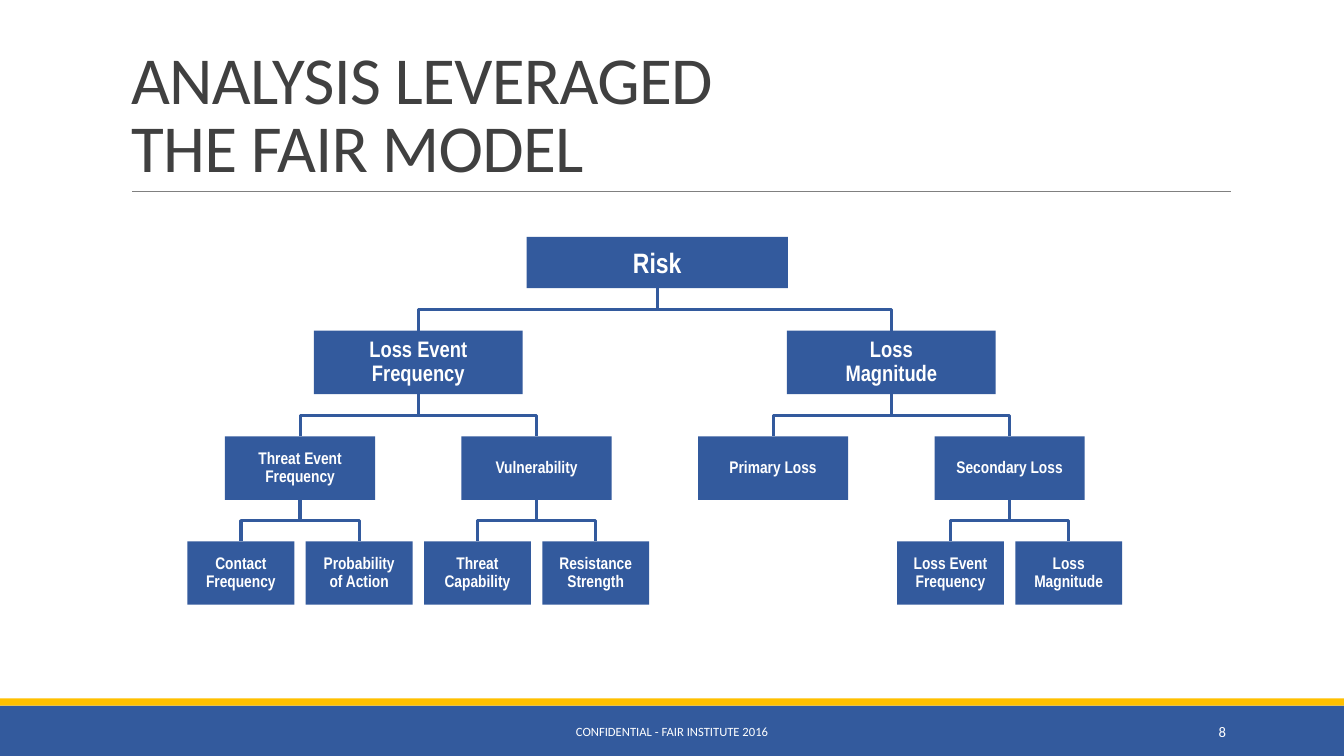
import dataclasses

import pptx
import pptx.dml.color
import pptx.enum.shapes
import pptx.enum.text
import pptx.oxml.ns
import pptx.util
import lxml.etree

PX = 9144  # EMU in one px, 100 px to the inch
ALIGN = pptx.enum.text.PP_ALIGN
ANCHOR = pptx.enum.text.MSO_ANCHOR


@dataclasses.dataclass(frozen=True)
class Theme:
    blue: str = "335A9D"
    gold: str = "FFC000"
    ink: str = "404040"
    rule: str = "808080"
    white: str = "FFFFFF"
    body_font: str = "Calibri"
    box_font: str = "Arial Narrow"
    title_size: float = 48
    footer_size: float = 9
    number_size: float = 10.5
    rule_width: float = 0.5
    branch_width: float = 2.25


THEME = Theme()


@dataclasses.dataclass(frozen=True)
class Level:
    top: int
    width: int
    height: int
    size: int
    spacing: float = 0.9


LEVELS = [
    Level(235, 259, 51, 20, 1.0),
    Level(328, 207, 63, 16),
    Level(433, 149, 63, 12),
    Level(537, 106, 63, 12),
]

# Each node: text, centre in leaf slots, children
RISK_TREE = ("Risk", 3.52, [
    ("Loss Event Frequency", 1.5, [
        ("Threat Event Frequency", 0.5, [
            ("Contact Frequency", 0, []),
            ("Probability of Action", 1, []),
        ]),
        ("Vulnerability", 2.5, [
            ("Threat Capability", 2, []),
            ("Resistance Strength", 3, []),
        ]),
    ]),
    ("Loss\nMagnitude", 5.5, [
        ("Primary Loss", 4.5, []),
        ("Secondary Loss", 6.5, [
            ("Loss Event Frequency", 6, []),
            ("Loss Magnitude", 7, []),
        ]),
    ]),
])
FIRST_SLOT, LAST_SLOT, LAST_INDEX = 239, 1060, 7


def px(n):
    return pptx.util.Emu(round(n * PX))


def rgb(value):
    return pptx.dml.color.RGBColor.from_string(value)


def write(sp, text, size, font, color, align, anchor=ANCHOR.MIDDLE,
          spacing=1.0, bold=False, tracking=None):
    """Fill a shape with one paragraph; a newline becomes a line break."""
    tf = sp.text_frame
    tf.word_wrap = True
    tf.auto_size = pptx.enum.text.MSO_AUTO_SIZE.NONE
    tf.vertical_anchor = anchor
    p = tf.paragraphs[0]
    p.alignment = align
    p.line_spacing = spacing
    for i, line in enumerate(text.split("\n")):
        if i:
            p.add_line_break()
        r = p.add_run()
        r.text = line
        r.font.size = pptx.util.Pt(size)
        r.font.name = font
        r.font.bold = bold
        r.font.color.rgb = rgb(color)
        if tracking is not None:
            r.font._element.set("spc", str(round(tracking * 100)))


def add_rect(s, left, top, width, height, color):
    sp = s.shapes.add_shape(pptx.enum.shapes.MSO_SHAPE.RECTANGLE,
                            px(left), px(top), px(width), px(height))
    sp.shadow.inherit = False
    sp.fill.solid()
    sp.fill.fore_color.rgb = rgb(color)
    sp.line.fill.background()
    return sp


def style_line(line, color, width):
    line.line.color.rgb = rgb(color)
    line.line.width = pptx.util.Pt(width)
    lxml.etree.SubElement(line._element.spPr, pptx.oxml.ns.qn("a:effectLst"))


def add_rule(s, x1, x2, y):
    line = s.shapes.add_connector(pptx.enum.shapes.MSO_CONNECTOR.STRAIGHT,
                                  px(x1), px(y), px(x2), px(y))
    style_line(line, THEME.rule, THEME.rule_width)


def add_label(s, left, width, text, size, align):
    sp = s.shapes.add_textbox(px(left), px(706), px(width), px(40))
    write(sp, text, size, THEME.body_font, THEME.white, align)


def add_title(s, text):
    sp = s.shapes.title
    sp.left, sp.top, sp.width, sp.height = px(120), px(31), px(1100), px(159)
    write(sp, text, THEME.title_size, THEME.body_font, THEME.ink, ALIGN.LEFT,
          ANCHOR.BOTTOM, spacing=0.85, tracking=-0.5)


def add_branch(s, parent, child):
    """Elbow from the parent's bottom to the child's top, turned to run downwards."""
    line = s.shapes.add_connector(pptx.enum.shapes.MSO_CONNECTOR.ELBOW, 0, 0, 0, 0)
    line.begin_connect(parent, 2)
    line.end_connect(child, 0)
    x1, y1 = parent.left + parent.width // 2, parent.top + parent.height
    x2, y2 = child.left + child.width // 2, child.top
    drop, spread = y2 - y1, abs(x2 - x1)
    line.left = pptx.util.Emu((x1 + x2 - drop) // 2)
    line.top = pptx.util.Emu((y1 + y2 - spread) // 2)
    line.width, line.height = pptx.util.Emu(drop), pptx.util.Emu(spread)
    xfrm = line._element.spPr.xfrm
    goes_right = x2 > x1
    xfrm.set("rot", str((270 if goes_right else 90) * 60000))
    xfrm.set("flipH", "1" if goes_right else "0")
    xfrm.set("flipV", "0")
    style_line(line, THEME.blue, THEME.branch_width)


def add_tree(s, node, depth=0):
    """Draw a node and everything below it; return the node's box."""
    text, slot, children = node
    level = LEVELS[depth]
    centre = FIRST_SLOT + (LAST_SLOT - FIRST_SLOT) * slot / LAST_INDEX
    box = add_rect(s, centre - level.width / 2, level.top,
                   level.width, level.height, THEME.blue)
    write(box, text, level.size, THEME.box_font, THEME.white, ALIGN.CENTER,
          spacing=level.spacing, bold=True)
    for child in children:
        add_branch(s, box, add_tree(s, child, depth + 1))
    return box


def main():
    prs = pptx.Presentation()
    prs.slide_width, prs.slide_height = px(1333), px(750)
    s = prs.slides.add_slide(prs.slide_layouts[5])
    add_rect(s, 0, 700, 1333, 50, THEME.blue)
    add_rect(s, 0, 693, 1333, 7, THEME.gold)
    add_rule(s, 131, 1221, 190)
    add_title(s, "ANALYSIS LEVERAGED\nTHE FAIR MODEL")
    add_label(s, 403, 527, "CONFIDENTIAL - FAIR INSTITUTE 2016",
              THEME.footer_size, ALIGN.CENTER)
    add_label(s, 1083, 143, "8", THEME.number_size, ALIGN.RIGHT)
    add_tree(s, RISK_TREE)
    prs.save("out.pptx")


if __name__ == "__main__":
    main()
